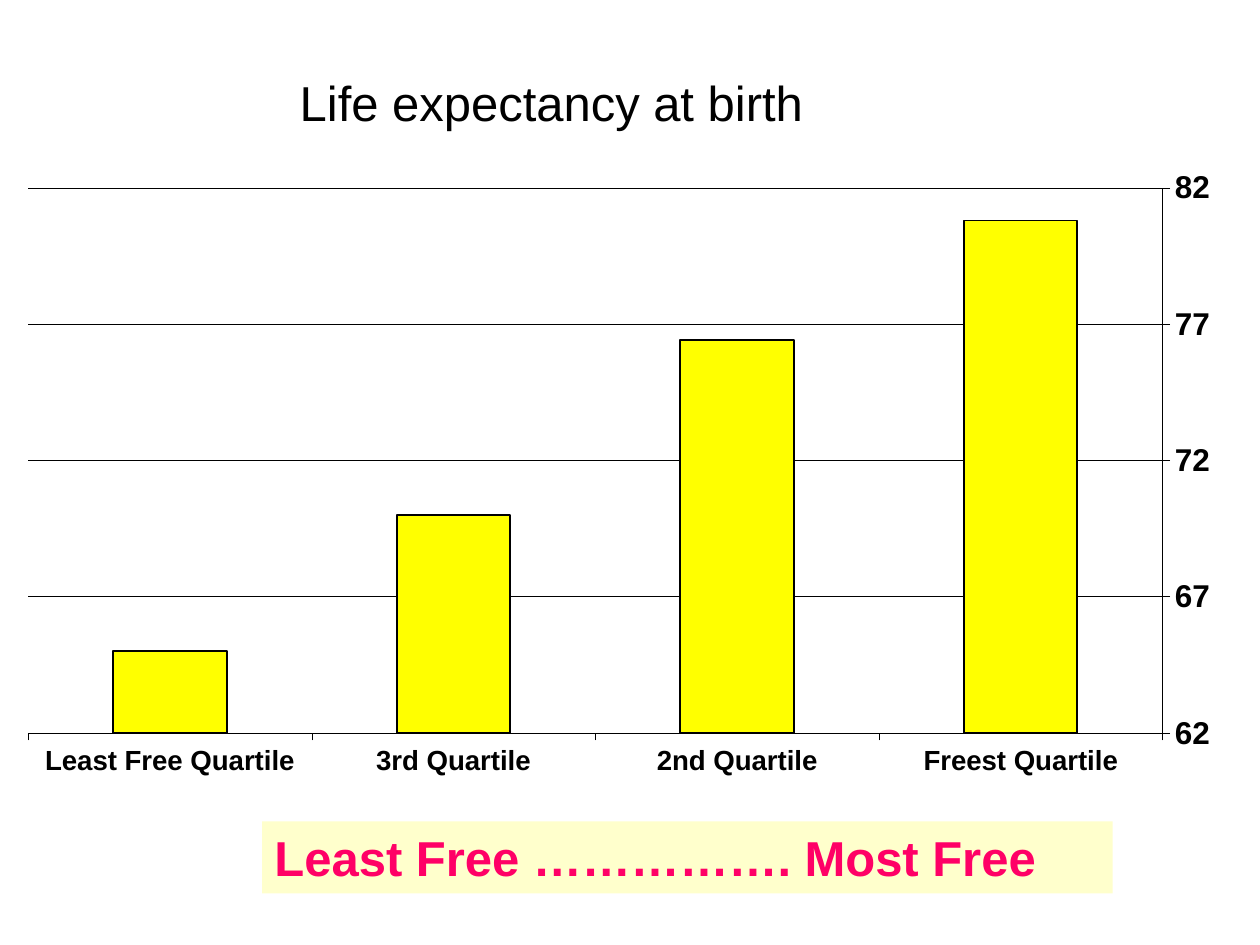
from dataclasses import dataclass

from lxml import etree
from pptx import Presentation
from pptx.chart.axis import _BaseAxis
from pptx.chart.chart import Chart
from pptx.chart.data import CategoryChartData
from pptx.dml.color import RGBColor
from pptx.enum.chart import XL_CHART_TYPE, XL_TICK_LABEL_POSITION, XL_TICK_MARK
from pptx.enum.text import MSO_ANCHOR, PP_ALIGN
from pptx.oxml import parse_xml
from pptx.oxml.ns import nsdecls, qn
from pptx.slide import Slide
from pptx.util import Inches, Pt

COLUMNS = XL_CHART_TYPE.COLUMN_CLUSTERED
LABELS_LOW = XL_TICK_LABEL_POSITION.LOW
TICK_OUTSIDE = XL_TICK_MARK.OUTSIDE
TICK_NONE = XL_TICK_MARK.NONE
MIDDLE = MSO_ANCHOR.MIDDLE
LEFT = PP_ALIGN.LEFT
CENTER = PP_ALIGN.CENTER

BLACK = RGBColor(0x00, 0x00, 0x00)
YELLOW = RGBColor(0xFF, 0xFF, 0x00)
CREAM = RGBColor(0xFF, 0xFF, 0xCC)
PINK = RGBColor(0xFF, 0x00, 0x66)

FONT = "Arial"
HAIRLINE = Pt(0.28)
LIFE_EXPECTANCY = {
    "Freest Quartile": 80.8,
    "2nd Quartile": 76.4,
    "3rd Quartile": 70,
    "Least Free Quartile": 65,
}
PLOT_AREA = {"x": 0.142, "y": 0.024, "w": 0.823, "h": 0.757}


@dataclass(frozen=True)
class Caption:
    text: str
    left: float
    top: float
    width: float
    height: float
    color: RGBColor
    bold: bool
    align: PP_ALIGN
    fill: RGBColor | None = None


CAPTIONS = (
    Caption("Life expectancy at birth", 0, 0.27, 8.75, 1.08, BLACK, False, CENTER),
    Caption("Least Free ……………. Most Free", 2.08, 6.52, 6.75, 0.57, PINK, True, LEFT, CREAM),
)


def apply_format(target: object, values: dict[str, object]) -> None:
    for name, value in values.items():
        setattr(target, name, value)


def draw_caption(slide: Slide, caption: Caption) -> None:
    box = slide.shapes.add_textbox(
        Inches(caption.left), Inches(caption.top), Inches(caption.width), Inches(caption.height)
    )
    if caption.fill is not None:
        box.fill.solid()
        box.fill.fore_color.rgb = caption.fill
    apply_format(box.text_frame, {"word_wrap": True, "vertical_anchor": MIDDLE})
    line = box.text_frame.paragraphs[0]
    apply_format(line, {"text": caption.text, "alignment": caption.align})
    apply_format(line.font, {"name": FONT, "size": Pt(28), "bold": caption.bold})
    line.font.color.rgb = caption.color


def style_axis(axis: _BaseAxis, size: float) -> None:
    apply_format(axis, {"major_tick_mark": TICK_OUTSIDE, "minor_tick_mark": TICK_NONE})
    apply_format(axis.tick_labels.font, {"name": FONT, "size": Pt(size), "bold": True})
    axis.tick_labels.font.color.rgb = BLACK
    axis.format.line.color.rgb = BLACK
    axis.format.line.width = HAIRLINE


def place_plot_area(chart: Chart) -> None:
    plot_area = chart.plots[0]._element.getparent()
    for previous in plot_area.findall(qn("c:layout")):
        plot_area.remove(previous)
    layout = parse_xml(f"<c:layout {nsdecls('c')}/>")
    manual = etree.SubElement(layout, qn("c:manualLayout"))
    settings = {"layoutTarget": "inner", "xMode": "edge", "yMode": "edge", **PLOT_AREA}
    for name, value in settings.items():
        etree.SubElement(manual, qn(f"c:{name}")).set("val", str(value))
    plot_area.insert(0, layout)


def draw_life_expectancy(slide: Slide) -> None:
    data = CategoryChartData(number_format="0")
    data.categories = list(LIFE_EXPECTANCY)
    data.add_series("Series 1", list(LIFE_EXPECTANCY.values()))
    chart = slide.shapes.add_chart(
        COLUMNS, Inches(-1.33), Inches(1.35), Inches(10.94), Inches(5.72), data
    ).chart
    apply_format(chart, {"has_title": False, "has_legend": False})
    apply_format(chart.font, {"name": FONT, "size": Pt(20.3), "bold": True})
    chart.font.color.rgb = BLACK

    quartiles, years = chart.category_axis, chart.value_axis
    style_axis(quartiles, 15.8)
    style_axis(years, 18)
    apply_format(quartiles, {"tick_label_position": LABELS_LOW, "reverse_order": True})
    apply_format(
        years,
        {"minimum_scale": 62, "maximum_scale": 82, "major_unit": 5, "has_major_gridlines": True},
    )
    apply_format(years.tick_labels, {"number_format": "0", "number_format_is_linked": False})
    gridline = years.major_gridlines.format.line
    gridline.color.rgb = BLACK
    gridline.width = HAIRLINE

    columns = chart.plots[0]
    apply_format(columns, {"gap_width": 150, "vary_by_categories": False})
    column_format = columns.series[0].format
    column_format.fill.solid()
    column_format.fill.fore_color.rgb = YELLOW
    column_format.line.color.rgb = BLACK
    column_format.line.width = Pt(1.13)
    place_plot_area(chart)


def main() -> None:
    presentation = Presentation()
    apply_format(presentation, {"slide_width": Inches(10), "slide_height": Inches(7.5)})
    slide = presentation.slides.add_slide(presentation.slide_layouts[6])
    title, freedom_scale = CAPTIONS
    draw_caption(slide, title)
    draw_life_expectancy(slide)
    draw_caption(slide, freedom_scale)
    presentation.save("out.pptx")


if __name__ == "__main__":
    main()
